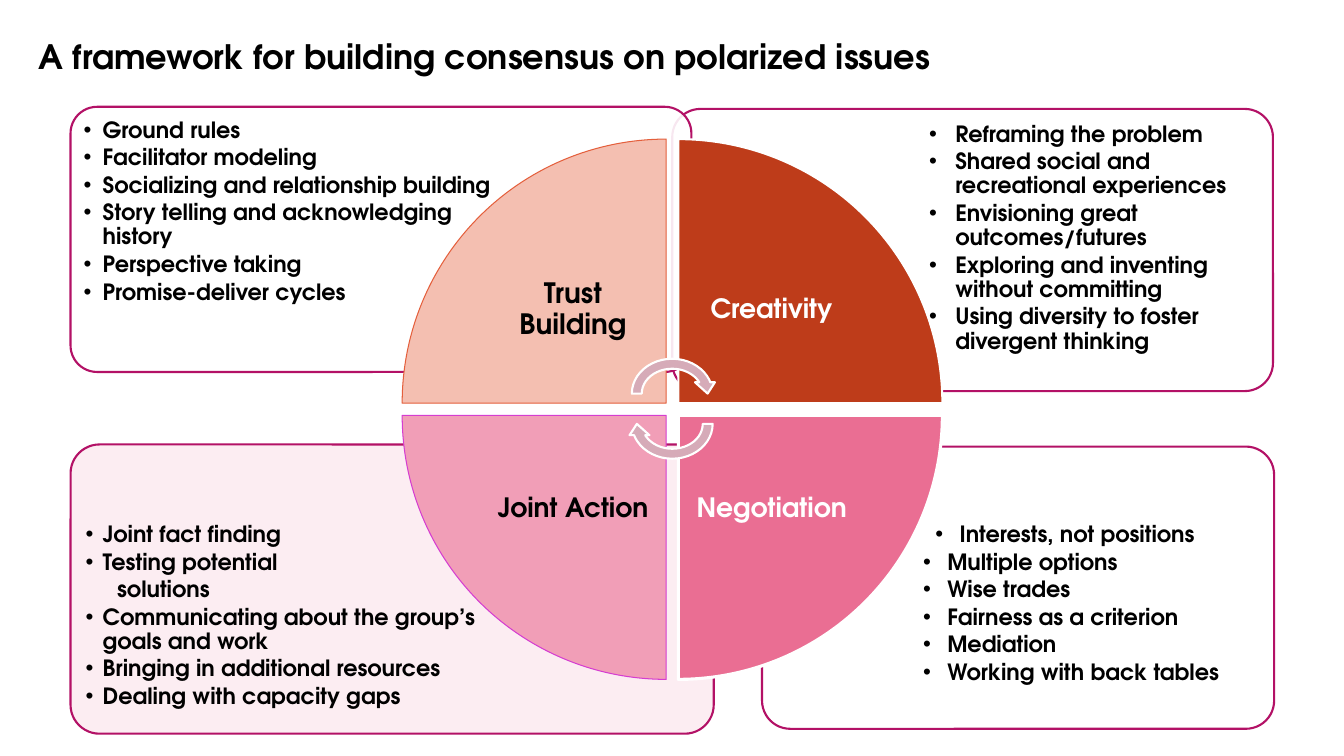
from dataclasses import dataclass

from lxml import etree
from pptx import Presentation
from pptx.dml.color import RGBColor
from pptx.enum.shapes import MSO_SHAPE
from pptx.enum.text import MSO_ANCHOR, MSO_AUTO_SIZE, PP_ALIGN
from pptx.oxml.ns import qn
from pptx.util import Pt

CARD, WEDGE, ARROW = MSO_SHAPE.ROUNDED_RECTANGLE, MSO_SHAPE.PIE_WEDGE, MSO_SHAPE.CIRCULAR_ARROW
TOP, MIDDLE, BOTTOM = MSO_ANCHOR.TOP, MSO_ANCHOR.MIDDLE, MSO_ANCHOR.BOTTOM
LEFT, CENTER = PP_ALIGN.LEFT, PP_ALIGN.CENTER


@dataclass(frozen=True)
class Theme:
    font: str = "TeX Gyre Adventor"
    black: str = "000000"
    white: str = "FFFFFF"
    card_line: str = "B31166"
    arrow: str = "D6ABB8"
    title_size: int = 24
    list_size: int = 16


THEME = Theme()
TITLE = "A framework for building consensus on polarized issues"

# Clockwise from top left. A list item is a text, or (text, left margin, hanging, bulleted).
QUADRANTS = [
    dict(label="Trust Building", size=20, color=THEME.black, col=0, row=0,
         wedge=("F4BFB1", "E45F3C", 0.75),
         card=(50.4, 76.3, 443.5, 189.4), card_fill=THEME.white,
         box=(54.7, 79.9, 302.4, 133.9), insets=(5, 5), margin=13.7, hanging=13.7,
         items=["Ground rules", "Facilitator modeling",
                "Socializing and relationship building",
                "Story telling and acknowledging history",
                "Perspective taking", "Promise-deliver cycles"]),
    dict(label="Creativity", size=19, color=THEME.white, col=1, row=0,
         wedge=("BE3C1A", THEME.white, 1.5),
         card=(480.2, 77.8, 429.1, 201.6), card_fill=THEME.white,
         box=(613.4, 82.8, 291.6, 142.6), insets=(5, 5), margin=64, hanging=18.7,
         items=["Reframing the problem",
                "Shared social and recreational experiences",
                "Envisioning great outcomes/futures",
                "Exploring and inventing without committing",
                "Using diversity to foster divergent thinking"]),
    dict(label="Negotiation", size=19, color=THEME.white, col=1, row=1,
         wedge=("EA6E93", THEME.white, 2.25),
         card=(544.3, 319, 365.8, 201.6), card_fill=THEME.white,
         box=(658, 373.7, 247, 141.8), insets=(0, 0), margin=18.7, hanging=17.3,
         items=[("Interests, not positions", 27.4, 17.3, True), "Multiple options",
                "Wise trades", "Fairness as a criterion", "Mediation",
                "Working with back tables"]),
    dict(label="Joint Action", size=19, color=THEME.black, col=0, row=1,
         wedge=("F19EB7", "D53DD0", 0.75),
         card=(50.4, 317.5, 459.4, 206.6), card_fill="FCECF1",
         box=(54.7, 373.7, 312.5, 145.4), insets=(5, 0), margin=13.7, hanging=12.2,
         items=["Joint fact finding", "Testing potential",
                ("solutions", 24, 0, False),
                "Communicating about the group’s goals and work",
                "Bringing in additional resources", "Dealing with capacity gaps"]),
]

CENTER_X, CENTER_Y, GAP = 480.2, 292.3, 8.7
WEDGE_SIDE, LABEL_SIDE, LABEL_INSET = 188.6, 133.2, 10.8
ARROW_W, ARROW_H, ARROW_TOPS = 64.8, 56.9, (252.7, 274.3)


def place(sp, box):
    sp.left, sp.top, sp.width, sp.height = map(Pt, box)


def quadrant_box(col, row, side):
    """Square whose inner corner sits half a gap from the wheel's centre."""
    x = CENTER_X + (GAP / 2 if col else -GAP / 2 - side)
    y = CENTER_Y + (GAP / 2 if row else -GAP / 2 - side)
    return x, y, side, side


def add_shape(s, kind, box, fill, line, width, rotation=0):
    sp = s.shapes.add_shape(kind, *map(Pt, box))
    sp.shadow.inherit = False
    sp.fill.solid()
    sp.fill.fore_color.rgb = RGBColor.from_string(fill)
    sp.line.color.rgb = RGBColor.from_string(line)
    sp.line.width = Pt(width)
    sp.rotation = rotation
    return sp


def set_frame(tf, insets, anchor):
    """Insets are left, top, right, bottom."""
    tf.margin_left, tf.margin_top, tf.margin_right, tf.margin_bottom = map(Pt, insets)
    tf.word_wrap = True
    tf.auto_size = MSO_AUTO_SIZE.NONE
    tf.vertical_anchor = anchor


def format_paragraph(p, size, color, align, space_after=0):
    p.alignment = align
    p.line_spacing = 0.9
    p.space_before, p.space_after = Pt(0), Pt(space_after)
    for r in p.runs:
        r.font.name, r.font.size, r.font.bold = THEME.font, Pt(size), True
        r.font.color.rgb = RGBColor.from_string(color)


def set_bullet(p, margin, hanging, bulleted):
    pPr = p._p.get_or_add_pPr()
    pPr.set("marL", str(Pt(margin)))
    pPr.set("indent", str(-Pt(hanging)))
    if bulleted:
        etree.SubElement(pPr, qn("a:buFont")).set("typeface", "Arial")
        etree.SubElement(pPr, qn("a:buChar")).set("char", "•")
    else:
        etree.SubElement(pPr, qn("a:buNone"))


def add_card(s, depth, quadrant):
    """Add a 90% opaque card behind the placeholders."""
    sp = add_shape(s, CARD, quadrant["card"], quadrant["card_fill"], THEME.card_line, 1.5)
    sp.adjustments[0] = 0.1
    color = sp._element.spPr.find(qn("a:solidFill"))[0]
    etree.SubElement(color, qn("a:alpha")).set("val", "90000")
    s.shapes._spTree.insert(2 + depth, sp._element)


def fill_list(sp, quadrant):
    place(sp, quadrant["box"])
    tf = sp.text_frame
    left, top = quadrant["insets"]
    set_frame(tf, (left, top, 5, 5), TOP)
    for i, item in enumerate(quadrant["items"]):
        if isinstance(item, str):
            item = item, quadrant["margin"], quadrant["hanging"], True
        text, *bullet = item
        p = tf.add_paragraph() if i else tf.paragraphs[0]
        p.text = text
        set_bullet(p, *bullet)
        format_paragraph(p, THEME.list_size, THEME.black, LEFT, 2.4)


def add_label(s, quadrant):
    box = quadrant_box(quadrant["col"], quadrant["row"], LABEL_SIDE)
    tf = s.shapes.add_textbox(*map(Pt, box)).text_frame
    set_frame(tf, [LABEL_INSET] * 4, MIDDLE)
    tf.text = quadrant["label"]
    format_paragraph(tf.paragraphs[0], quadrant["size"], quadrant["color"], CENTER)


def main():
    prs = Presentation()
    prs.slide_width, prs.slide_height = Pt(960), Pt(540)
    s = prs.slides.add_slide(prs.slide_layouts.get_by_name("Comparison"))

    title = s.shapes.title
    place(title, (20.2, 0, 939.6, 58.3))
    title.text_frame.text = TITLE
    set_frame(title.text_frame, (7.2, 3.6, 7.2, 3.6), BOTTOM)
    format_paragraph(title.text_frame.paragraphs[0], THEME.title_size, THEME.black, LEFT)

    bodies = [sp for sp in s.placeholders if sp.placeholder_format.idx > 0]
    for sp, quadrant in zip(bodies, QUADRANTS):
        fill_list(sp, quadrant)
    for depth, name in enumerate(("Negotiation", "Joint Action", "Creativity", "Trust Building")):
        add_card(s, depth, next(q for q in QUADRANTS if q["label"] == name))

    for i, quadrant in enumerate(QUADRANTS):
        box = quadrant_box(quadrant["col"], quadrant["row"], WEDGE_SIDE)
        add_shape(s, WEDGE, box, *quadrant["wedge"], rotation=90 * i)
        add_label(s, quadrant)

    for i, top in enumerate(ARROW_TOPS):
        box = (CENTER_X - ARROW_W / 2, top, ARROW_W, ARROW_H)
        add_shape(s, ARROW, box, THEME.arrow, THEME.white, 1.5, rotation=180 * i)

    prs.save("out.pptx")


if __name__ == "__main__":
    main()
